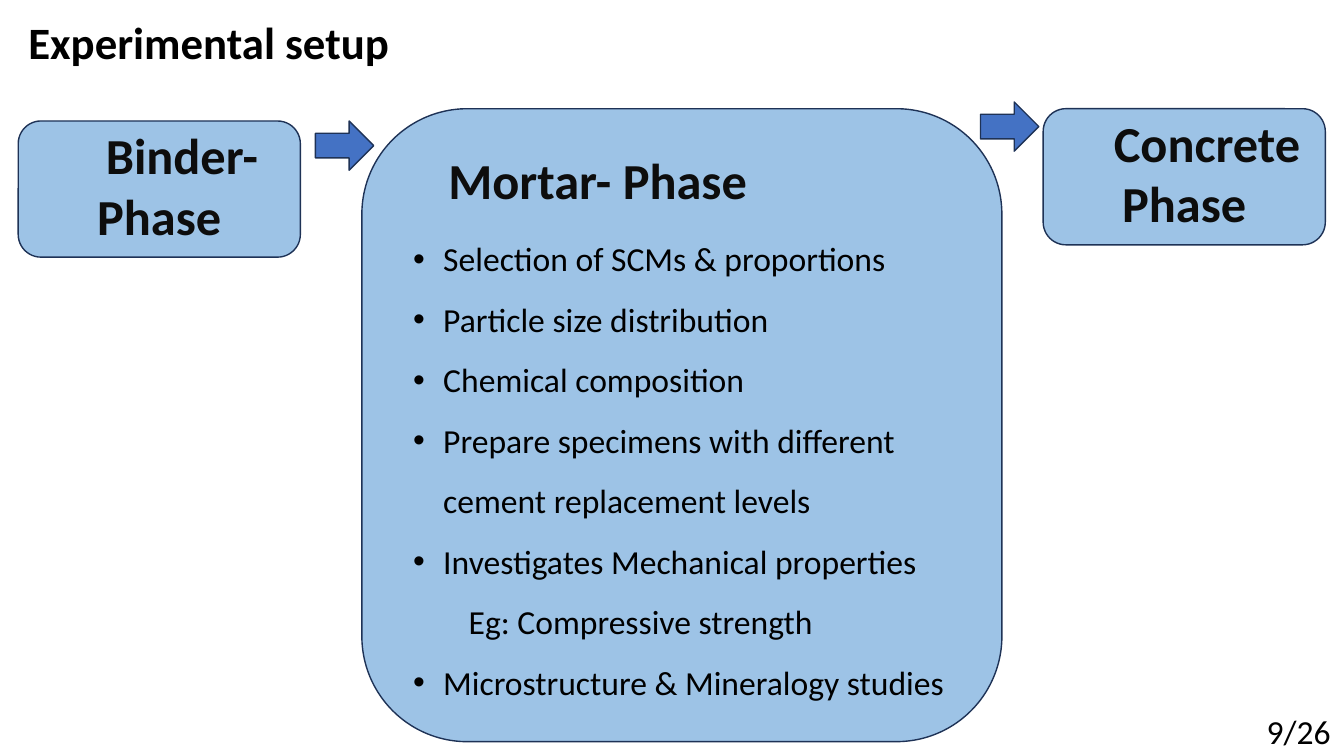
import dataclasses

import pptx
import pptx.dml.color
import pptx.enum.shapes
import pptx.enum.text
import pptx.oxml.ns
import pptx.util
from lxml import etree

Cm, Pt = pptx.util.Cm, pptx.util.Pt
MSO_SHAPE = pptx.enum.shapes.MSO_SHAPE
ALIGN = pptx.enum.text.PP_ALIGN
ANCHOR = pptx.enum.text.MSO_ANCHOR
AUTO_SIZE = pptx.enum.text.MSO_AUTO_SIZE


@dataclasses.dataclass(frozen=True)
class Theme:
    font: str = "Calibri"
    text: str = "000000"
    heading: str = "0D0D0D"
    panel: str = "9DC3E6"
    arrow: str = "4472C4"
    outline: str = "1E3256"
    title_size: int = 32
    heading_size: int = 36
    body_size: int = 24
    line_width: int = 1


def rgb(value):
    return pptx.dml.color.RGBColor.from_string(value)


def apply(target, formats):
    for name, value in formats.items():
        setattr(target, name, value)


class SlideBuilder:
    def __init__(self, slide, theme):
        self.slide, self.theme = slide, theme

    def place(self, shape, box):
        apply(shape, dict(zip(("left", "top", "width", "height"), map(Cm, box))))

    def frame(self, shape, **formats):
        apply(shape.text_frame, {"word_wrap": True, "auto_size": AUTO_SIZE.NONE, **formats})

    def add_text(self, paragraph, text, size, color, bold=False, **formats):
        apply(paragraph, formats)
        run = paragraph.add_run()
        run.text = text
        apply(run.font, {"name": self.theme.font, "size": Pt(size), "bold": bold})
        run.font.color.rgb = rgb(color)

    def indent(self, paragraph, left, first, bullet=None):
        properties = paragraph._p.get_or_add_pPr()
        properties.set("marL", str(Cm(left)))
        properties.set("indent", str(Cm(first)))
        qn = pptx.oxml.ns.qn
        if bullet:
            etree.SubElement(properties, qn("a:buFont"), typeface="Arial")
            etree.SubElement(properties, qn("a:buChar"), char=bullet)
        else:
            etree.SubElement(properties, qn("a:buNone"))

    def title(self, text, box):
        title = self.slide.shapes.title
        self.place(title, box)
        self.frame(title, vertical_anchor=ANCHOR.BOTTOM)
        self.add_text(title.text_frame.paragraphs[0], text, self.theme.title_size,
                      self.theme.text, True, alignment=ALIGN.LEFT, line_spacing=0.9)

    def shape(self, kind, box, fill):
        shape = self.slide.shapes.add_shape(kind, *map(Cm, box))
        shape.shadow.inherit = False
        shape.fill.solid()
        shape.fill.fore_color.rgb = rgb(fill)
        shape.line.color.rgb = rgb(self.theme.outline)
        shape.line.width = Pt(self.theme.line_width)
        return shape

    def phase(self, heading, box, alignment, first_indent, **frame):
        panel = self.shape(MSO_SHAPE.ROUNDED_RECTANGLE, box, self.theme.panel)
        self.frame(panel, **frame)
        paragraph = panel.text_frame.paragraphs[0]
        self.indent(paragraph, 0, first_indent)
        self.add_text(paragraph, heading, self.theme.heading_size, self.theme.heading,
                      True, alignment=alignment)
        return panel

    def arrow(self, box):
        self.shape(MSO_SHAPE.RIGHT_ARROW, box, self.theme.arrow)

    def steps(self, items, box, panel):
        body = self.slide.placeholders[1]
        self.place(body, box)
        self.frame(body, vertical_anchor=ANCHOR.BOTTOM, margin_left=0, margin_right=0,
                   margin_top=0, margin_bottom=0)
        panel._element.addnext(body._element)  # list lies on the panel
        frame = body.text_frame
        for number, (level, text) in enumerate(items):
            paragraph = frame.add_paragraph() if number else frame.paragraphs[0]
            self.indent(paragraph, *((1.66, 0) if level else (1.02, -0.76, "•")))
            self.add_text(paragraph, text, self.theme.body_size, self.theme.text, level=level,
                          alignment=ALIGN.LEFT, line_spacing=1.5,
                          space_before=Pt(0), space_after=Pt(0))

    def page_number(self, text, box):
        number = self.slide.shapes.add_textbox(*map(Cm, box))
        self.frame(number)
        self.add_text(number.text_frame.paragraphs[0], text, self.theme.body_size,
                      self.theme.text)


STEPS = [
    (0, "Selection of SCMs & proportions"),
    (0, "Particle size distribution"),
    (0, "Chemical composition"),
    (0, "Prepare specimens with different cement replacement levels"),
    (0, "Investigates Mechanical properties"),
    (1, "Eg: Compressive strength"),
    (0, "Microstructure & Mineralogy studies"),
]
HEADING_INDENT = 1.15


def main():
    deck = pptx.Presentation()
    apply(deck, {"slide_width": Cm(33.87), "slide_height": Cm(19.05)})
    builder = SlideBuilder(deck.slides.add_slide(deck.slide_layouts[1]), Theme())

    # Title and page number
    builder.title("Experimental setup", (0.46, -1.04, 12.14, 2.9))
    builder.page_number("9/26", (31.67, 17.78, 2.18, 1.27))

    # Mortar phase with its steps
    mortar = builder.phase("Mortar- Phase", (9.12, 2.74, 16.13, 15.95), ALIGN.LEFT,
                           HEADING_INDENT, vertical_anchor=ANCHOR.TOP, margin_top=Cm(0.23))
    builder.steps(STEPS, (10.15, 5.49, 14.06, 12.2), mortar)

    # Neighbouring phases
    for heading, left, top in (("Binder- Phase", 0.46, 3.05), ("Concrete Phase", 26.29, 2.74)):
        builder.phase(heading, (left, top, 7.11, 3.43), ALIGN.CENTER, HEADING_INDENT,
                      vertical_anchor=ANCHOR.MIDDLE, margin_bottom=Cm(0.34))

    # Arrows between phases
    for left, top in ((7.95, 3.05), (24.71, 2.57)):
        builder.arrow((left, top, 1.47, 1.24))

    deck.save("out.pptx")


if __name__ == "__main__":
    main()
